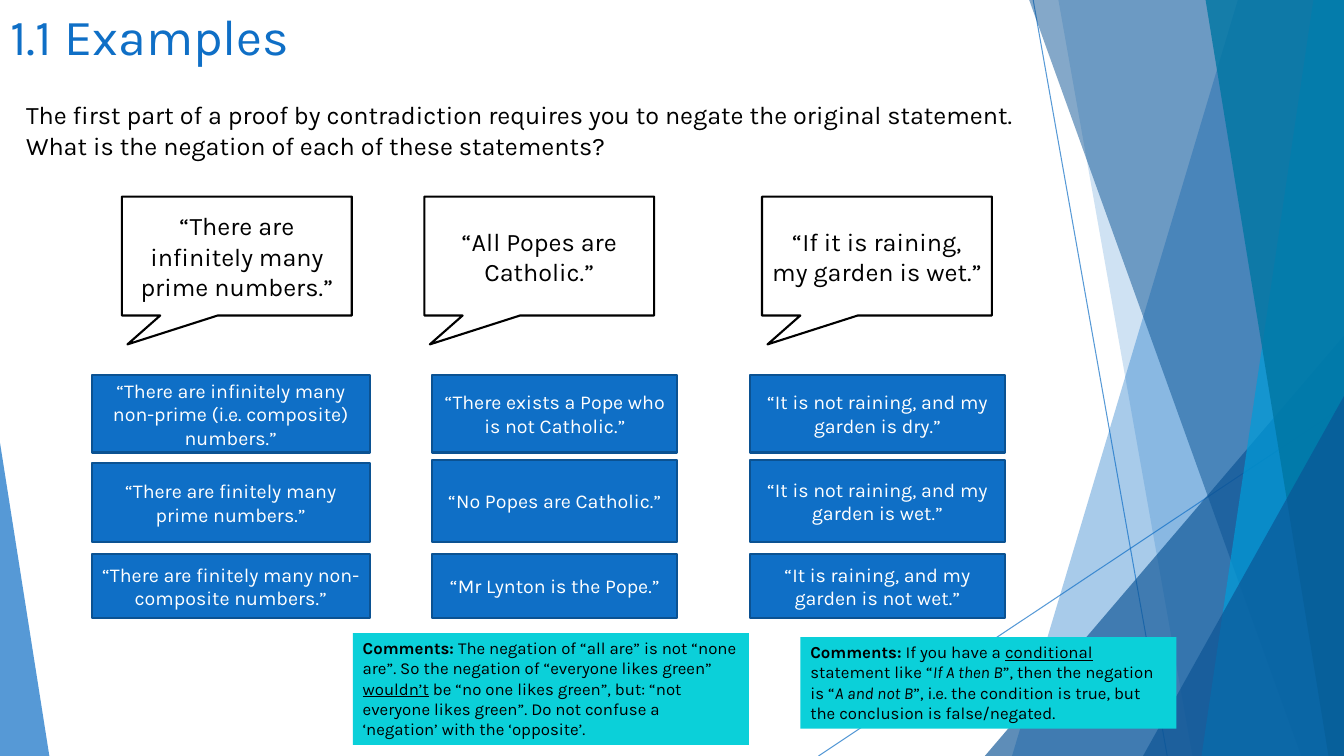
from pptx import Presentation
from pptx import util as u
from pptx.dml.color import RGBColor
from pptx.enum import shapes, text
from pptx.oxml import parse_xml
from pptx.oxml.ns import nsdecls, qn
from lxml import etree

BLUE, NAVY, EDGE = "0F6FC6", "0B5394", "0B5292"
SKY, TEAL, AQUA = "009DD9", "0076A3", "0BD0D9"
BLACK, WHITE = "000000", "FFFFFF"
KIND = shapes.MSO_SHAPE
MID, LEFT = text.PP_ALIGN.CENTER, text.PP_ALIGN.LEFT


def tint(fill, color, alpha=100):
    """Set a solid colour, with opacity in percent, on a fill."""
    fill.solid()
    fill.fore_color.rgb = RGBColor.from_string(color)
    if alpha < 100:
        node = fill._xPr.find(qn("a:solidFill"))[0]
        etree.SubElement(node, qn("a:alpha"), val=str(alpha * 1000))


class Page:
    """One slide on a grid of 40 columns and 30 rows."""
    COLS, ROWS, FONT = 40, 30, "Karla"

    def __init__(self, deck):
        self.slide = deck.slides.add_slide(deck.slide_layouts[5])
        self.items = self.slide.shapes
        self.col = deck.slide_width / self.COLS
        self.row = deck.slide_height / self.ROWS

    def spot(self, x, y):
        return round(x * self.col), round(y * self.row)

    def area(self, x, y, w, h):
        return self.spot(x, y) + self.spot(w, h)

    def label(self, item, paras, size, color, align=LEFT, anchor="TOP"):
        """Fill a shape with paragraphs, each a list of (text, marks) runs."""
        frame = item.text_frame
        frame.word_wrap = True
        frame.auto_size = text.MSO_AUTO_SIZE.NONE
        frame.vertical_anchor = text.MSO_ANCHOR[anchor]
        for i, runs in enumerate(paras):
            para = frame.add_paragraph() if i else frame.paragraphs[0]
            para.alignment = align
            for words, marks in runs:
                run = para.add_run()
                run.text = words
                font = run.font
                font.name, font.size = self.FONT, u.Pt(size)
                font.bold, font.italic = "b" in marks, "i" in marks
                font.underline = "u" in marks
                tint(font.fill, color)

    def title(self, words, *area):
        item = self.items.title
        item.left, item.top, item.width, item.height = self.area(*area)
        self.label(item, [[(words, "")]], 36, BLUE)

    def note(self, lines, *area):
        item = self.items.add_textbox(*self.area(*area))
        self.label(item, [[(line, "")] for line in lines], 18, BLACK)

    def shape(self, kind, area, fill, alpha=100, edge=None, adj=()):
        item = self.items.add_shape(kind, *self.area(*area))
        for i, value in enumerate(adj):
            item.adjustments[i] = value
        return self.paint(item, fill, alpha, edge)

    def paint(self, item, fill, alpha=100, edge=None):
        item.shadow.inherit = False
        tint(item.fill, fill, alpha)
        if edge:
            tint(item.line.fill, edge)
            item.line.width = u.Pt(1.5)
        else:
            item.line.fill.background()
        return item

    def facet(self, top, foot, color, alpha):
        """Draw a panel from a slanted left edge to the right slide edge."""
        pen = self.items.build_freeform(*self.spot(top, 0), scale=1.0)
        ends = [(self.COLS, 0), (self.COLS, self.ROWS), (foot, self.ROWS)]
        pen.add_line_segments([self.spot(*p) for p in ends], close=True)
        self.paint(pen.convert_to_shape(), color, alpha)

    def line(self, start, end):
        item = self.items.add_connector(
            shapes.MSO_CONNECTOR.STRAIGHT, *self.spot(*start), *self.spot(*end))
        tint(item.line.fill, BLUE, 70)
        item.line.width = u.Pt(0.75)
        item._element.spPr.append(
            parse_xml("<a:effectLst %s/>" % nsdecls("a")))

    def wedge(self, x, y, w, tip, color, alpha):
        """Draw a right triangle that stands on the slide's bottom edge."""
        self.shape(KIND.ISOSCELES_TRIANGLE, (x, y, w, self.ROWS - y),
                   color, alpha, adj=[tip])

    def speech(self, words, *area):
        item = self.shape(KIND.RECTANGULAR_CALLOUT, area, WHITE,
                          edge=BLACK, adj=[-0.476, 0.743])
        self.label(item, [[(words, "")]], 18, BLACK, MID, "MIDDLE")

    def choice(self, words, *area):
        item = self.shape(KIND.RECTANGLE, area, BLUE, edge=EDGE)
        self.label(item, [[(words, "")]], 14, WHITE, MID, "MIDDLE")

    def remark(self, runs, *area):
        item = self.shape(KIND.RECTANGLE, area, AQUA)
        self.label(item, [[("Comments:", "b")] + runs], 12, BLACK)


# Speech column, answer column, answer width, statement, answers
TOPICS = [
    (3.63, 2.73, 8.28, "“There are infinitely many prime numbers.”",
     ["“There are infinitely many non-prime (i.e. composite) numbers.”",
      "“There are finitely many prime numbers.”",
      "“There are finitely many non-composite numbers.”"]),
    (12.63, 12.87, 7.29, "“All Popes are Catholic.”",
     ["“There exists a Pope who is not Catholic.”",
      "“No Popes are Catholic.”",
      "“Mr Lynton is the Pope.”"]),
    (22.68, 22.32, 7.59, "“If it is raining, my garden is wet.”",
     ["“It is not raining, and my garden is dry.”",
      "“It is not raining, and my garden is wet.”",
      "“It is raining, and my garden is not wet.”"]),
]
# Top and height of each answer row
BANDS = [(14.88, 3.08), (18.24, 3.28), (22, 2.52)]
FIRST = [BANDS[0], (18.36, 3.16), BANDS[2]]


def main():
    deck = Presentation()
    deck.slide_width, deck.slide_height = u.Inches(13.33), u.Inches(7.5)
    page = Page(deck)

    # Background facets
    page.line((30.75, 0), (34.74, 30))
    page.line((40, 16.12), (24.36, 30))
    page.facet(36.84, 30.12, BLUE, 36)
    page.facet(31.5, 35.49, BLUE, 20)
    page.wedge(29.31, 13.32, 10.69, 1, NAVY, 66)
    page.facet(30.63, 38.73, NAVY, 50)
    page.facet(39.09, 35.76, SKY, 70)
    page.facet(35.88, 39.54, TEAL, 80)
    page.wedge(34.02, 15.72, 5.98, 1, NAVY, 66)
    page.wedge(0, 17.56, 1.47, 0, BLUE, 70)

    # Heading and task
    page.title("1.1 Examples", 0, 0, 28.2, 5.76)
    page.note(["The first part of a proof by contradiction requires you to "
               "negate the original statement.",
               "What is the negation of each of these statements?"],
              0.48, 3.76, 30.42, 4.04)

    # Statements with their possible negations
    for i, (say, left, wide, claim, answers) in enumerate(TOPICS):
        page.speech(claim, say, 7.8, 6.84, 4.72)
        for words, (top, high) in zip(answers, BANDS if i else FIRST):
            page.choice(words, left, top, wide, high)

    # Comments
    page.remark([
        (" The negation of “all are” is not “none are”. So the negation of "
         "“everyone likes green” ", ""),
        ("wouldn’t", "u"),
        (" be “no one likes green”, but: “not everyone likes green”. Do not "
         "confuse a ‘negation’ with the ‘opposite’.", "")],
        10.5, 25.12, 11.79, 4.44)
    page.remark([
        (" If you have a ", ""), ("conditional", "u"),
        (" statement like “", ""), ("If A then B", "i"),
        ("”, then the negation is “", ""), ("A and not B", "i"),
        ("”, i.e. the condition is true, but the conclusion is "
         "false/negated.", "")],
        23.82, 25.28, 11.19, 3.64)

    deck.save("out.pptx")


if __name__ == "__main__":
    main()
